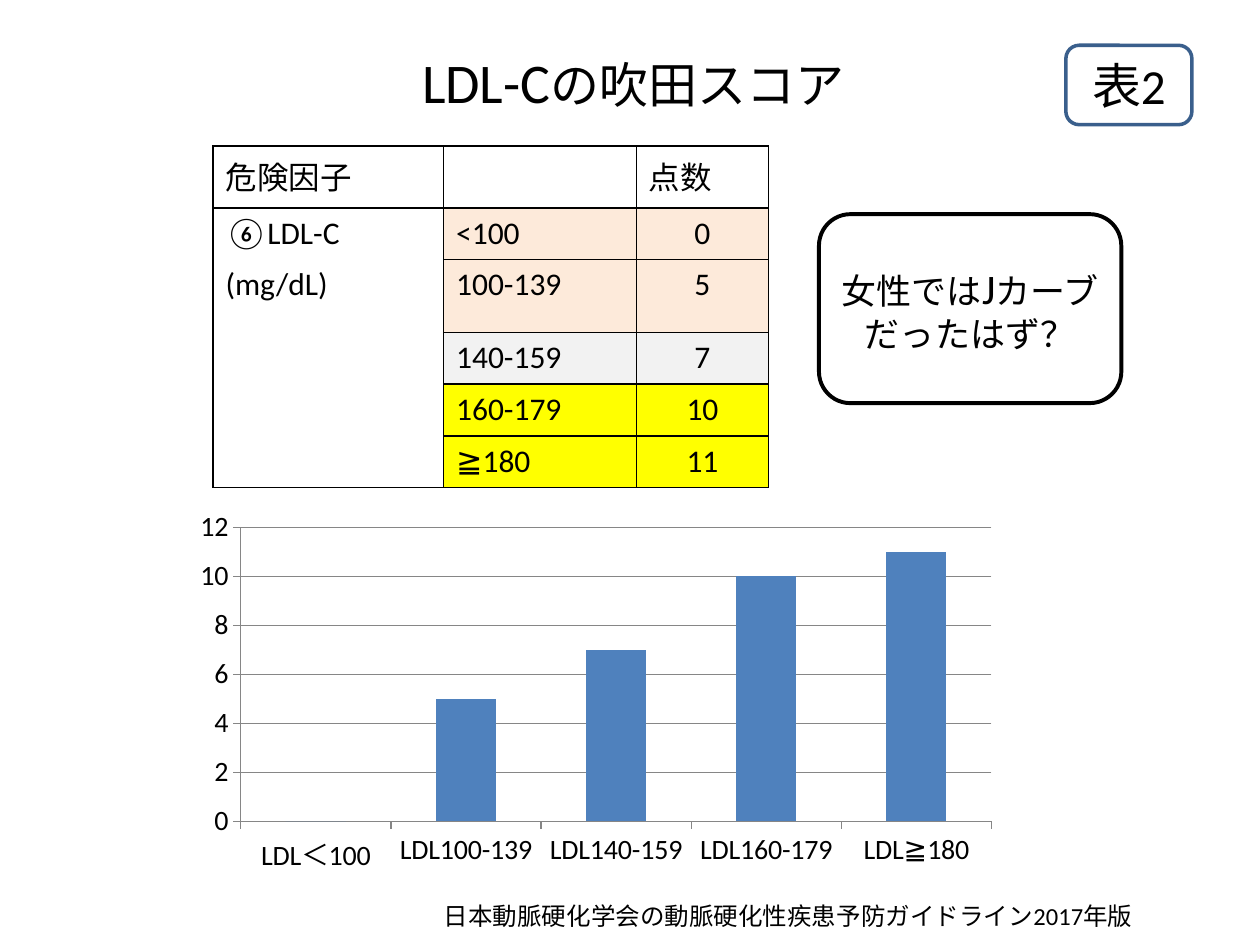
from lxml.etree import SubElement
from pptx import Presentation
from pptx.chart.data import CategoryChartData
from pptx.dml.color import RGBColor
from pptx.enum.chart import XL_CHART_TYPE, XL_TICK_MARK
from pptx.enum.shapes import MSO_SHAPE
from pptx.enum.text import MSO_ANCHOR, PP_ALIGN
from pptx.oxml.ns import qn
from pptx.util import Inches, Pt

FONT = "Calibri"
BLACK, WHITE, GRID_GRAY = "000000", "FFFFFF", "868686"
PEACH, GRAY, YELLOW = "FDEADA", "F2F2F2", "FFFF00"
SCORES = [
    ("<100", 0, PEACH),
    ("100-139", 5, PEACH),
    ("140-159", 7, GRAY),
    ("160-179", 10, YELLOW),
    ("≧180", 11, YELLOW),
]
FACTOR_LABELS = ["⑥LDL-C", "(mg/dL)", "", "", ""]
COLUMN_WIDTHS = [1.83, 1.53, 1.05]
ROW_HEIGHTS = [0.49, 0.41, 0.58, 0.41, 0.41, 0.41]


def color(value):
    return RGBColor.from_string(value)


def paint(fill, value):
    fill.solid()
    fill.fore_color.rgb = color(value)


def style_font(font, size):
    font.name = FONT
    font.size = Pt(size)
    font.color.rgb = color(BLACK)


def write_runs(frame, runs):
    frame.word_wrap = True
    frame.vertical_anchor = MSO_ANCHOR.MIDDLE
    paragraph = frame.paragraphs[0]
    paragraph.alignment = PP_ALIGN.CENTER
    style_font(paragraph.font, runs[0][1])
    for text, size in runs:
        run = paragraph.add_run()
        run.text = text
        if size != runs[0][1]:
            run.font.size = Pt(size)
    return paragraph


def add_label(slide, box, runs):
    label = slide.shapes.add_textbox(*map(Inches, box))
    label.text_frame.margin_left = label.text_frame.margin_right = 0
    return write_runs(label.text_frame, runs)


def add_rounded_box(slide, box, line_color, line_width, runs):
    rounded = slide.shapes.add_shape(MSO_SHAPE.ROUNDED_RECTANGLE, *map(Inches, box))
    rounded.shadow.inherit = False
    paint(rounded.fill, WHITE)
    rounded.line.color.rgb = color(line_color)
    rounded.line.width = Pt(line_width)
    write_runs(rounded.text_frame, runs)


def set_borders(cell, sides):
    properties = cell._tc.get_or_add_tcPr()
    for position, side in enumerate("LRTB"):
        border = properties.makeelement(qn(f"a:ln{side}"), {"w": str(Pt(1))})
        if side in sides:
            solid = SubElement(border, qn("a:solidFill"))
            SubElement(solid, qn("a:srgbClr"), val=BLACK)
        else:
            SubElement(border, qn("a:noFill"))
        properties.insert(position, border)


def fill_cell(cell, text, fill, sides="LRTB", alignment=None):
    paint(cell.fill, fill)
    set_borders(cell, sides)
    paragraph = cell.text_frame.paragraphs[0]
    paragraph.text = text
    paragraph.alignment = alignment
    style_font(paragraph.font, 18)


def add_score_table(slide):
    frame = slide.shapes.add_table(
        len(ROW_HEIGHTS), len(COLUMN_WIDTHS), Inches(1.69), Inches(1.16),
        Inches(sum(COLUMN_WIDTHS)), Inches(sum(ROW_HEIGHTS)))
    table = frame.table
    for column, width in zip(table.columns, COLUMN_WIDTHS):
        column.width = Inches(width)
    for row, height in zip(table.rows, ROW_HEIGHTS):
        row.height = Inches(height)
    for column, heading in enumerate(["危険因子", "", "点数"]):
        fill_cell(table.cell(0, column), heading, WHITE)
    for row, (factor, (level, score, fill)) in enumerate(zip(FACTOR_LABELS, SCORES), 1):
        sides = "LR" + ("T" if row == 1 else "") + ("B" if row == len(SCORES) else "")
        fill_cell(table.cell(row, 0), factor, WHITE, sides)
        fill_cell(table.cell(row, 1), level, fill)
        fill_cell(table.cell(row, 2), str(score), fill, alignment=PP_ALIGN.CENTER)


def add_score_chart(slide):
    scores = CategoryChartData()
    scores.categories = ["LDL" + level.replace("<", "＜") for level, _, _ in SCORES]
    scores.add_series("Series 1", [score for _, score, _ in SCORES])
    chart = slide.shapes.add_chart(
        XL_CHART_TYPE.COLUMN_CLUSTERED, Inches(1.46), Inches(3.99),
        Inches(6.54), Inches(3), scores).chart
    chart.has_legend = False
    chart.has_title = False
    style_font(chart.font, 10)
    for axis in (chart.category_axis, chart.value_axis):
        axis.major_tick_mark = XL_TICK_MARK.OUTSIDE
        axis.minor_tick_mark = XL_TICK_MARK.NONE
        axis.format.line.color.rgb = color(GRID_GRAY)
        style_font(axis.tick_labels.font, 16)
    score_axis = chart.value_axis
    score_axis.minimum_scale, score_axis.maximum_scale = 0, 12
    score_axis.major_unit = 2
    score_axis.has_major_gridlines = True
    score_axis.major_gridlines.format.line.color.rgb = color(GRID_GRAY)
    plot = chart.plots[0]
    plot.gap_width = 150
    plot.vary_by_categories = False
    paint(plot.series[0].format.fill, "4F81BD")


def main():
    deck = Presentation()
    deck.slide_width, deck.slide_height = Inches(10), Inches(7.5)
    slide = deck.slides.add_slide(deck.slide_layouts[6])
    add_label(slide, (0.83, 0.29, 8.39, 0.71), [("LDL-C", 32), ("の吹田スコア", 28)])
    add_score_chart(slide)
    add_score_table(slide)
    add_rounded_box(slide, (6.5, 1.7, 2.4, 1.5), BLACK, 2.25,
                    [("女性では", 20), ("J", 24), ("カーブだったはず？", 20)])
    citation = add_label(slide, (3.35, 7.1, 5.81, 0.36),
                         [("日本動脈硬化学会の動脈硬化性疾患予防ガイドライン2017年版", 14)])
    citation.line_spacing = 0.9
    add_rounded_box(slide, (8.46, 0.36, 1, 0.63), "3A5F8C", 2, [("表2", 28)])
    deck.save("out.pptx")


if __name__ == "__main__":
    main()
